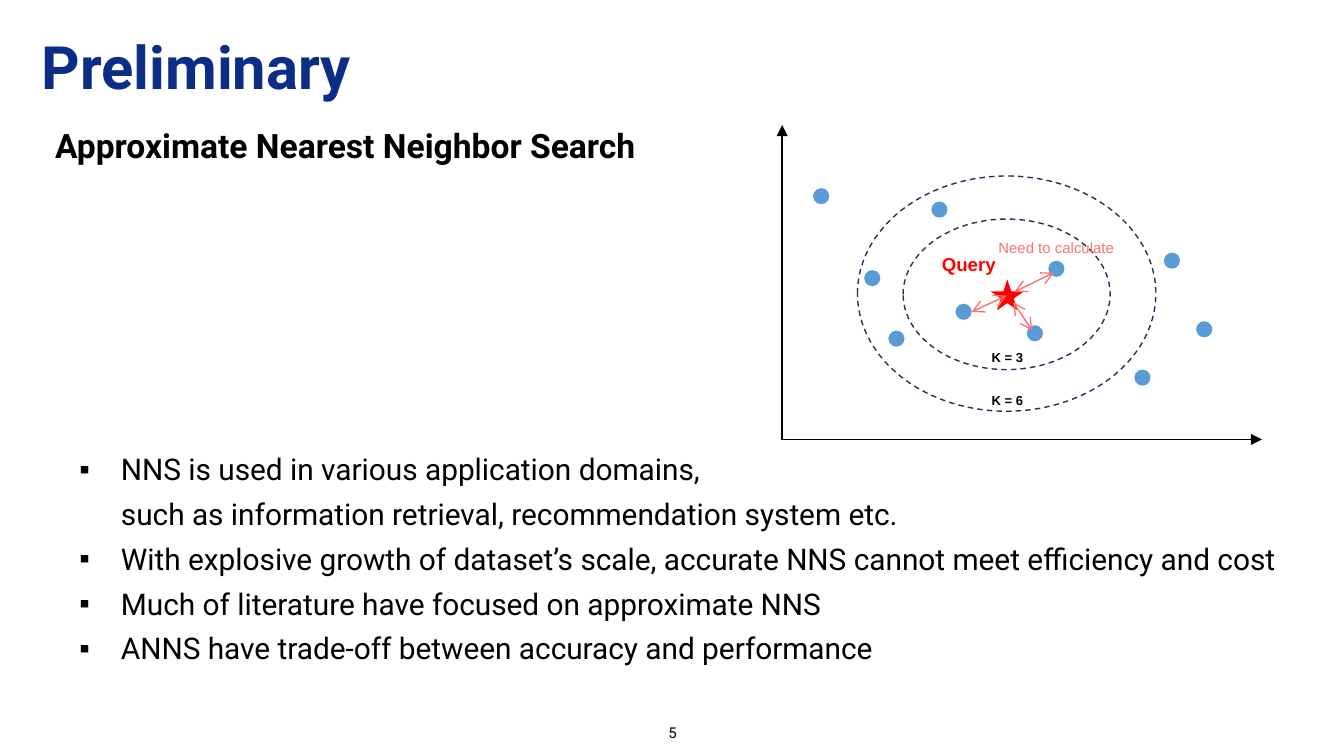
from typing import NamedTuple

from lxml import etree
from pptx import Presentation
from pptx import util as u
from pptx.dml import color
from pptx.enum import dml, shapes, text
from pptx.oxml import ns

BLACK, NAVY, RED, CORAL = "000000", "0B2D86", "FF0000", "FF7171"
PAGE_WIDTH = 10
PAGE_HEIGHT = PAGE_WIDTH * 9 / 16
DOT_SIZE = 0.12
TIGHT = (0.07, 0.04)
ROOMY = (0.1, 0.05)


class Arrow(NamedTuple):
    start: tuple[float, float]
    end: tuple[float, float]


class Area(NamedTuple):
    left: float
    top: float
    width: float
    height: float

    def inches(self):
        return [u.Inches(value) for value in self]


AXES = [Arrow((5.82, 3.27), (5.82, 0.93)), Arrow((5.81, 3.27), (9.39, 3.27))]
DISTANCES = [
    Arrow((7.84, 2.03), (7.55, 2.17)),
    Arrow((7.68, 2.46), (7.54, 2.25)),
    Arrow((7.49, 2.2), (7.23, 2.32)),
]
RINGS = [Area(6.38, 1.31, 2.22, 1.75), Area(6.72, 1.63, 1.54, 1.12)]
DOTS = [
    (6.05, 1.4), (6.93, 1.5), (6.43, 2.01), (7.11, 2.26), (6.61, 2.46),
    (7.8, 1.94), (7.64, 2.42), (8.66, 1.88), (8.44, 2.75), (8.9, 2.39),
]
BULLETS = [
    "NNS is used in various application domains,\v"
    "such as information retrieval, recommendation system etc.",
    "With explosive growth of dataset’s scale, accurate NNS cannot meet efficiency and cost",
    "Much of literature have focused on approximate NNS",
    "ANNS have trade-off between accuracy and performance",
]


def rgb(value: str) -> color.RGBColor:
    return color.RGBColor.from_string(value)


def add_child(parent, tag: str, **attributes: str):
    return etree.SubElement(parent, ns.qn(tag), attributes)


def set_bullet(para) -> None:
    """Give the paragraph a hanging square bullet."""
    props = para._p.get_or_add_pPr()
    props.set("marL", str(u.Inches(0.47)))
    props.set("indent", str(u.Inches(-0.31)))
    bullet_color = add_child(props, "a:buClr")
    add_child(bullet_color, "a:srgbClr", val=BLACK)
    add_child(props, "a:buFont", typeface="Arial")
    add_child(props, "a:buChar", char="▪")


def add_text(page, area: Area, *lines: str, size: float, font: str = "Roboto",
             fill: str = BLACK, bold: bool = False, bullets: bool = False,
             spacing: float = 1.0, anchor=text.MSO_ANCHOR.MIDDLE,
             align=text.PP_ALIGN.LEFT, inset=TIGHT, wrap: bool = True):
    box = page.shapes.add_textbox(*area.inches())
    frame = box.text_frame
    frame.word_wrap = wrap
    frame.auto_size = (text.MSO_AUTO_SIZE.NONE if wrap
                       else text.MSO_AUTO_SIZE.SHAPE_TO_FIT_TEXT)
    frame.vertical_anchor = anchor
    frame.margin_left = frame.margin_right = u.Inches(inset[0])
    frame.margin_top = frame.margin_bottom = u.Inches(inset[1])
    for index, line in enumerate(lines):
        para = frame.add_paragraph() if index else frame.paragraphs[0]
        para.text = line
        para.alignment = align
        para.line_spacing = spacing
        if bullets:
            set_bullet(para)
        for span in para.runs:
            span.font.name = font
            span.font.size = u.Pt(size)
            span.font.bold = bold
            span.font.color.rgb = rgb(fill)
    return box


def add_label(page, area: Area, line: str, **style):
    return add_text(page, area, line, font="Arial", wrap=False, inset=ROOMY,
                    anchor=text.MSO_ANCHOR.TOP, **style)


def add_figure(page, kind, area: Area, fill: str | None = None,
               dashed: str | None = None):
    figure = page.shapes.add_shape(kind, *area.inches())
    figure.shadow.inherit = False
    if fill:
        figure.fill.solid()
        figure.fill.fore_color.rgb = rgb(fill)
    else:
        figure.fill.background()
    if dashed:
        figure.line.color.rgb = rgb(dashed)
        figure.line.width = u.Pt(0.75)
        figure.line.dash_style = dml.MSO_LINE.DASH
    else:
        figure.line.fill.background()
    return figure


def add_arrow(page, arrow: Arrow, stroke: str, width: float, tip: str,
              both_ends: bool = False):
    points = [u.Inches(value) for value in (*arrow.start, *arrow.end)]
    line = page.shapes.add_connector(shapes.MSO_CONNECTOR.STRAIGHT, *points)
    line.line.color.rgb = rgb(stroke)
    line.line.width = u.Pt(width)
    outline = line.line._get_or_add_ln()
    if both_ends:
        add_child(outline, "a:headEnd", type=tip)
    add_child(outline, "a:tailEnd", type=tip)
    add_child(line._element.spPr, "a:effectLst")
    return line


def draw_search_diagram(page) -> None:
    kinds = shapes.MSO_SHAPE
    for axis in AXES:
        add_arrow(page, axis, BLACK, 1, "triangle")
    for ring in RINGS:
        add_figure(page, kinds.OVAL, ring, dashed="1E3256")
    for left, top in DOTS:
        add_figure(page, kinds.OVAL, Area(left, top, DOT_SIZE, DOT_SIZE), fill="5B9BD5")
    add_figure(page, kinds.STAR_5_POINT, Area(7.37, 2.08, 0.25, 0.23), fill=RED)
    add_label(page, Area(6.91, 1.83, 0.61, 0.27), "Query", size=10, fill=RED, bold=True)
    for count, top in ((3, 2.55), (6, 2.87)):
        add_label(page, Area(7.28, top, 0.44, 0.22), f"K = {count}", size=7, bold=True)
    for distance in DISTANCES:
        add_arrow(page, distance, CORAL, 0.75, "arrow", both_ends=True)
    add_label(page, Area(7.33, 1.73, 1.07, 0.24), "Need to calculate", size=8, fill=CORAL)


def main() -> None:
    deck = Presentation()
    deck.slide_width = u.Inches(PAGE_WIDTH)
    deck.slide_height = u.Inches(PAGE_HEIGHT)
    page = deck.slides.add_slide(deck.slide_layouts[6])
    add_text(page, Area(0.24, 0.18, 6.82, 0.68), "Preliminary",
             size=32, fill=NAVY, bold=True, spacing=0.9)
    add_text(page, Area(3.88, 5.33, 2.25, 0.24), "5", size=8,
             align=text.PP_ALIGN.CENTER)
    add_text(page, Area(0.34, 0.85, 9.31, 0.46),
             "Approximate Nearest Neighbor Search", size=18, bold=True)
    add_text(page, Area(0.36, 3.25, 9.29, 2), *BULLETS, size=16,
             bullets=True, spacing=1.25, anchor=text.MSO_ANCHOR.TOP)
    draw_search_diagram(page)
    deck.save("out.pptx")


if __name__ == "__main__":
    main()
